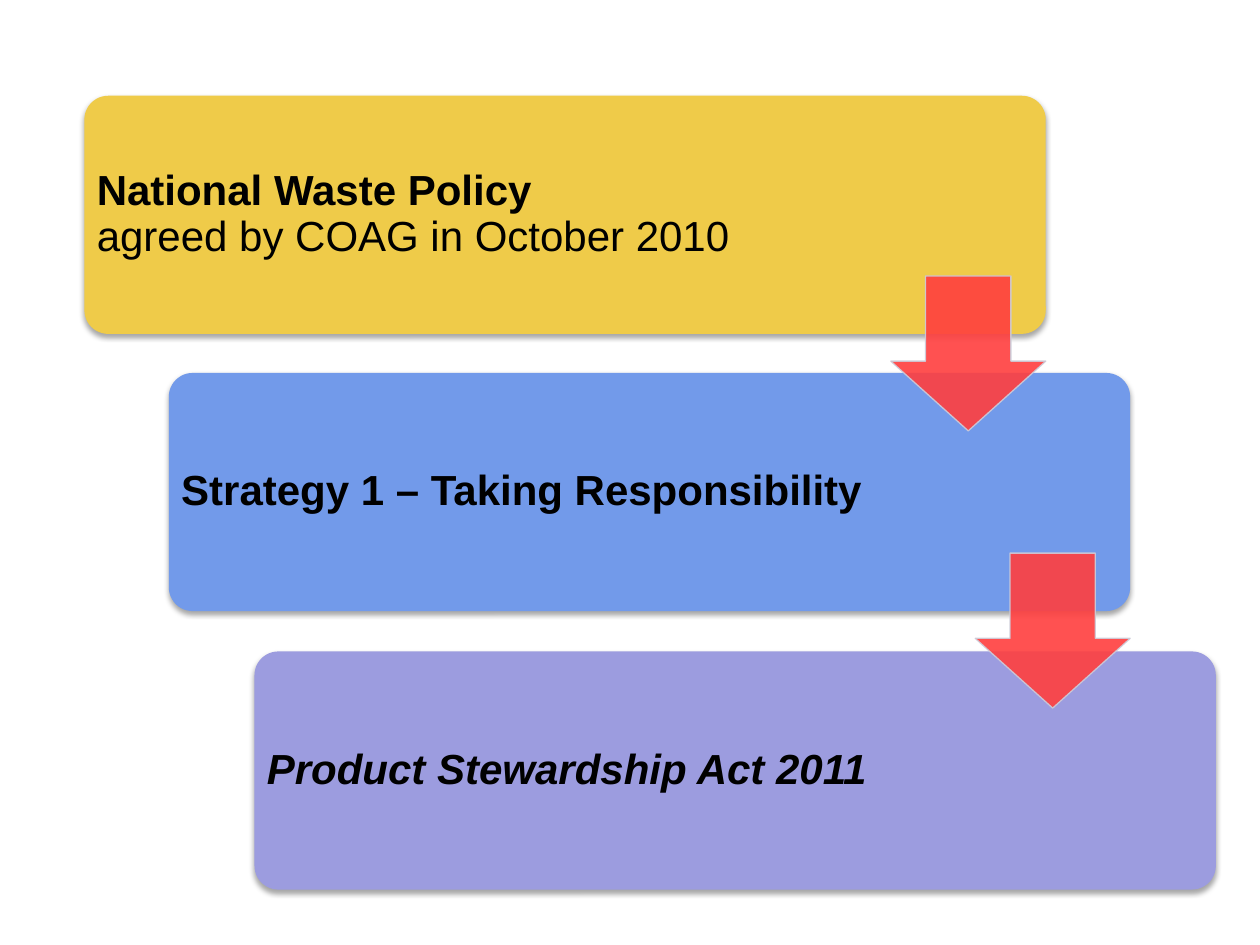
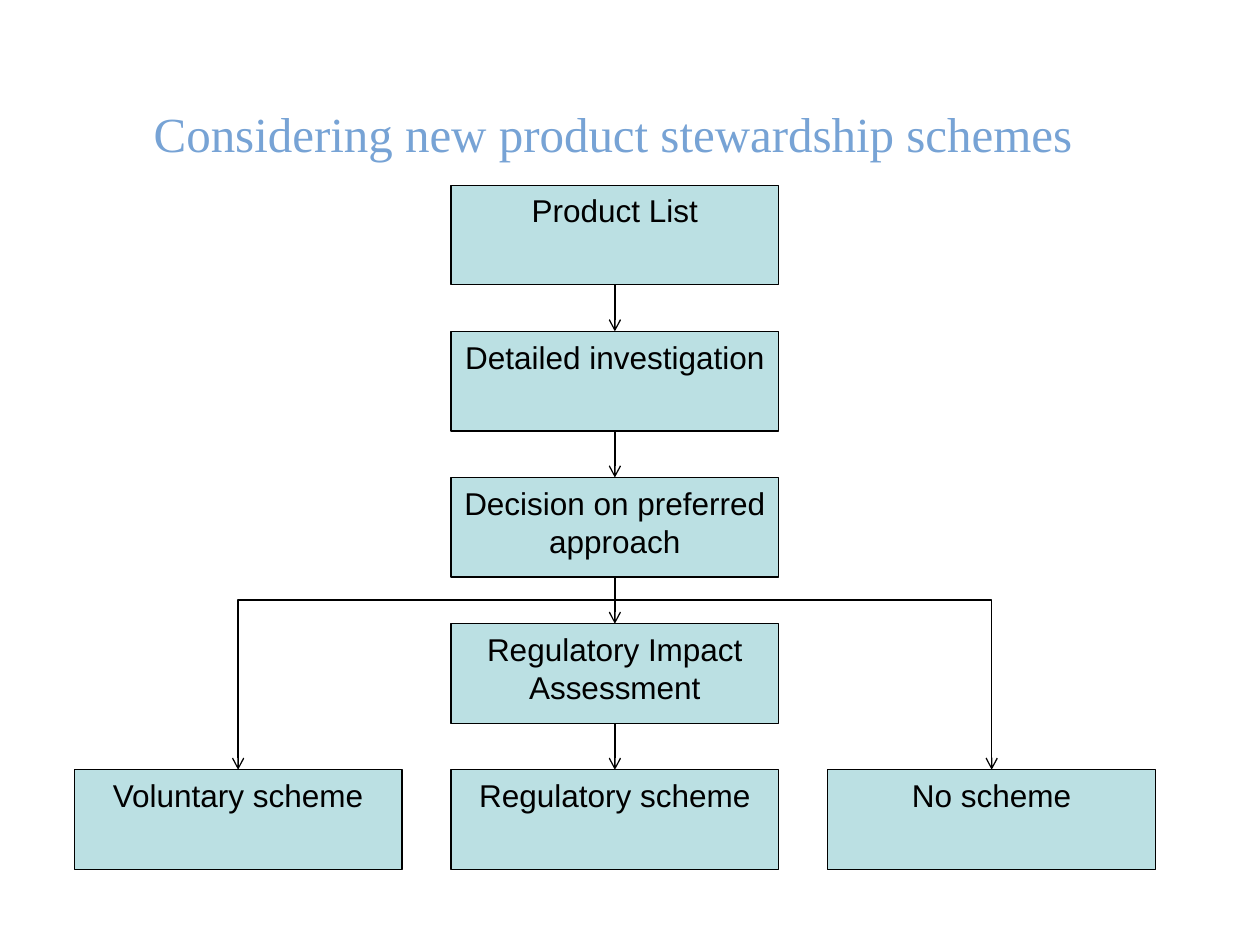
from dataclasses import dataclass

import pptx
import pptx.dml.color
import pptx.enum.shapes
import pptx.enum.text
import pptx.oxml
import pptx.oxml.ns
import pptx.util

SHAPES = pptx.enum.shapes.MSO_SHAPE
CONNECTORS = pptx.enum.shapes.MSO_CONNECTOR
ANCHOR = pptx.enum.text.MSO_ANCHOR
ALIGN = pptx.enum.text.PP_ALIGN
NAMESPACE = pptx.oxml.ns.nsdecls("a")
EMU_PER_PX = 9144  # 100 px to the inch


@dataclass(frozen=True)
class Theme:
    body_font: str = "Arial"
    title_font: str = "Times New Roman"
    text: str = "000000"
    title: str = "77A3D5"
    cards: tuple = ("EFCB49", "729AEA", "9C9CDF")
    arrow: str = "FF3F3F"
    arrow_line: str = "CDCDDA"
    box: str = "BBE0E3"
    line: str = "000000"
    line_width: float = 0.75
    title_size: int = 28
    card_size: int = 24
    box_size: int = 18


THEME = Theme()

# Staircase of cards: size of one card and of the arrow on its lower right corner
CARD_WIDTH, CARD_HEIGHT = 763, 189
CARD_TEXT_WIDTH = 573
ARROW_SIZE, ARROW_DROP = 123, 143

# Flow chart grid
BOX_WIDTH, BOX_HEIGHT = 260, 79
COLUMN_LEFT, COLUMN_STEP = 59, 299
ROW_TOP, ROW_STEP = 147, 116
BEND = 12000  # share of the drop before a branch turns, in 1/100000


def px(length):
    return pptx.util.Emu(round(length * EMU_PER_PX))


def rgb(color):
    return pptx.dml.color.RGBColor.from_string(color)


def append_xml(parent, xml):
    parent.append(pptx.oxml.parse_xml(xml.replace(" ", f" {NAMESPACE} ", 1)))


# --- Shared building blocks ---

def style_line(line, color):
    line.color.rgb = rgb(color)
    line.width = pptx.util.Pt(THEME.line_width)


def style_font(font, name, size, color, bold=False, italic=False):
    font.name = name
    font.size = pptx.util.Pt(size)
    font.color.rgb = rgb(color)
    font.bold = bold
    font.italic = italic


def set_margins(text_frame, margin):
    text_frame.margin_left = text_frame.margin_right = px(margin)
    text_frame.margin_top = text_frame.margin_bottom = px(margin)


def add_filled_shape(slide, kind, left, top, width, height, fill):
    shape = slide.shapes.add_shape(kind, px(left), px(top), px(width), px(height))
    shape.shadow.inherit = False
    shape.fill.solid()
    shape.fill.fore_color.rgb = rgb(fill)
    return shape


def add_text(slide, left, top, width, height, text, anchor, margin):
    text_box = slide.shapes.add_textbox(px(left), px(top), px(width), px(height))
    text_frame = text_box.text_frame
    text_frame.word_wrap = True
    text_frame.vertical_anchor = anchor
    set_margins(text_frame, margin)
    paragraph = text_frame.paragraphs[0]
    paragraph.text = text
    return paragraph


# --- Staircase of cards ---

def card_position(step):
    return 67 + step * 135 // 2, 76 + step * 441 // 2


def add_card(slide, step, text, italic=False):
    left, top = card_position(step)
    card = add_filled_shape(slide, SHAPES.ROUNDED_RECTANGLE, left, top,
                            CARD_WIDTH, CARD_HEIGHT, THEME.cards[step])
    card.adjustments[0] = 0.1
    card.line.fill.background()
    effects = card._element.spPr.find(pptx.oxml.ns.qn("a:effectLst"))
    append_xml(effects,
               '<a:outerShdw blurRad="40000" dist="23000" dir="5400000" rotWithShape="0">'
               '<a:srgbClr val="000000"><a:alpha val="35000"/></a:srgbClr></a:outerShdw>')

    paragraph = add_text(slide, left, top, CARD_TEXT_WIDTH, CARD_HEIGHT,
                         text, ANCHOR.MIDDLE, 10)
    paragraph.line_spacing = 0.9
    for index, run in enumerate(paragraph.runs):
        style_font(run.font, THEME.body_font, THEME.card_size, THEME.text,
                   bold=index == 0, italic=italic)


def add_step_arrow(slide, step):
    left, top = card_position(step)
    arrow = add_filled_shape(slide, SHAPES.DOWN_ARROW, left + CARD_WIDTH - ARROW_SIZE,
                             top + ARROW_DROP, ARROW_SIZE, ARROW_SIZE, THEME.arrow)
    arrow.adjustments[0] = 0.55
    arrow.adjustments[1] = 0.45
    style_line(arrow.line, THEME.arrow_line)
    for color in arrow._element.spPr.iter(pptx.oxml.ns.qn("a:srgbClr")):
        append_xml(color, '<a:alpha val="90000"/>')


# --- Flow chart ---

def add_title(slide, text):
    paragraph = add_text(slide, 122, 36, 764, 93, text, ANCHOR.BOTTOM, 0)
    paragraph.line_spacing = pptx.util.Pt(36)
    style_font(paragraph.runs[0].font, THEME.title_font, THEME.title_size, THEME.title)


def column_center(column):
    return COLUMN_LEFT + column * COLUMN_STEP + BOX_WIDTH // 2


def row_top(row):
    return ROW_TOP + row * ROW_STEP


def add_box(slide, column, row, text):
    box = add_filled_shape(slide, SHAPES.RECTANGLE, COLUMN_LEFT + column * COLUMN_STEP,
                           row_top(row), BOX_WIDTH, BOX_HEIGHT, THEME.box)
    style_line(box.line, THEME.line)
    text_frame = box.text_frame
    text_frame.word_wrap = True
    text_frame.vertical_anchor = ANCHOR.TOP
    text_frame.text = text
    paragraph = text_frame.paragraphs[0]
    paragraph.alignment = ALIGN.CENTER
    style_font(paragraph.runs[0].font, THEME.body_font, THEME.box_size, THEME.text)


def add_arrow_line(slide, kind, begin_x, begin_y, end_x, end_y):
    connector = slide.shapes.add_connector(kind, px(begin_x), px(begin_y),
                                           px(end_x), px(end_y))
    style_line(connector.line, THEME.line)
    append_xml(connector.line._get_or_add_ln(), '<a:tailEnd type="arrow"/>')
    append_xml(connector._element.spPr, "<a:effectLst />")
    return connector


def add_down_arrow(slide, row):
    center = column_center(1)
    add_arrow_line(slide, CONNECTORS.STRAIGHT, center, row_top(row) + BOX_HEIGHT,
                   center, row_top(row + 1))


def add_branch(slide, column, from_row, to_row):
    """Elbow that leaves the middle column downwards, as a turned connector."""
    begin_x, end_x = column_center(1), column_center(column)
    begin_y, end_y = row_top(from_row) + BOX_HEIGHT, row_top(to_row)
    middle_x, middle_y = (begin_x + end_x) / 2, (begin_y + end_y) / 2
    half_drop, half_span = (end_y - begin_y) / 2, abs(end_x - begin_x) / 2
    side = 1 if end_x > begin_x else -1
    connector = add_arrow_line(slide, CONNECTORS.ELBOW,
                               middle_x + side * half_drop, middle_y - half_span,
                               middle_x - side * half_drop, middle_y + half_span)
    properties = connector._element.spPr
    quarter_turns = 3 if side > 0 else 1
    properties.find(pptx.oxml.ns.qn("a:xfrm")).set("rot", str(quarter_turns * 5400000))
    guides = next(properties.iter(pptx.oxml.ns.qn("a:avLst")))
    append_xml(guides, f'<a:gd name="adj1" fmla="val {BEND}"/>')


# --- Slides ---

def build_policy_slide(slide):
    add_card(slide, 0, "National Waste Policy\vagreed by COAG in October 2010")
    add_card(slide, 1, "Strategy 1 – Taking Responsibility")
    add_card(slide, 2, "Product Stewardship Act 2011", italic=True)
    for step in range(2):
        add_step_arrow(slide, step)


def build_schemes_slide(slide):
    add_title(slide, "Considering new product stewardship schemes")
    stages = ("Product List", "Detailed investigation", "Decision on preferred approach",
              "Regulatory Impact Assessment", "Regulatory scheme")
    last_row = len(stages) - 1
    for row, stage in enumerate(stages):
        add_box(slide, 1, row, stage)
    for row in range(last_row):
        add_down_arrow(slide, row)
    for column, outcome in ((0, "Voluntary scheme"), (2, "No scheme")):
        add_box(slide, column, last_row, outcome)
        add_branch(slide, column, 2, last_row)


def main():
    presentation = pptx.Presentation()
    presentation.slide_width, presentation.slide_height = px(1000), px(750)
    blank_layout = presentation.slide_layouts[6]
    for build in (build_policy_slide, build_schemes_slide):
        build(presentation.slides.add_slide(blank_layout))
    presentation.save("out.pptx")


if __name__ == "__main__":
    main()
